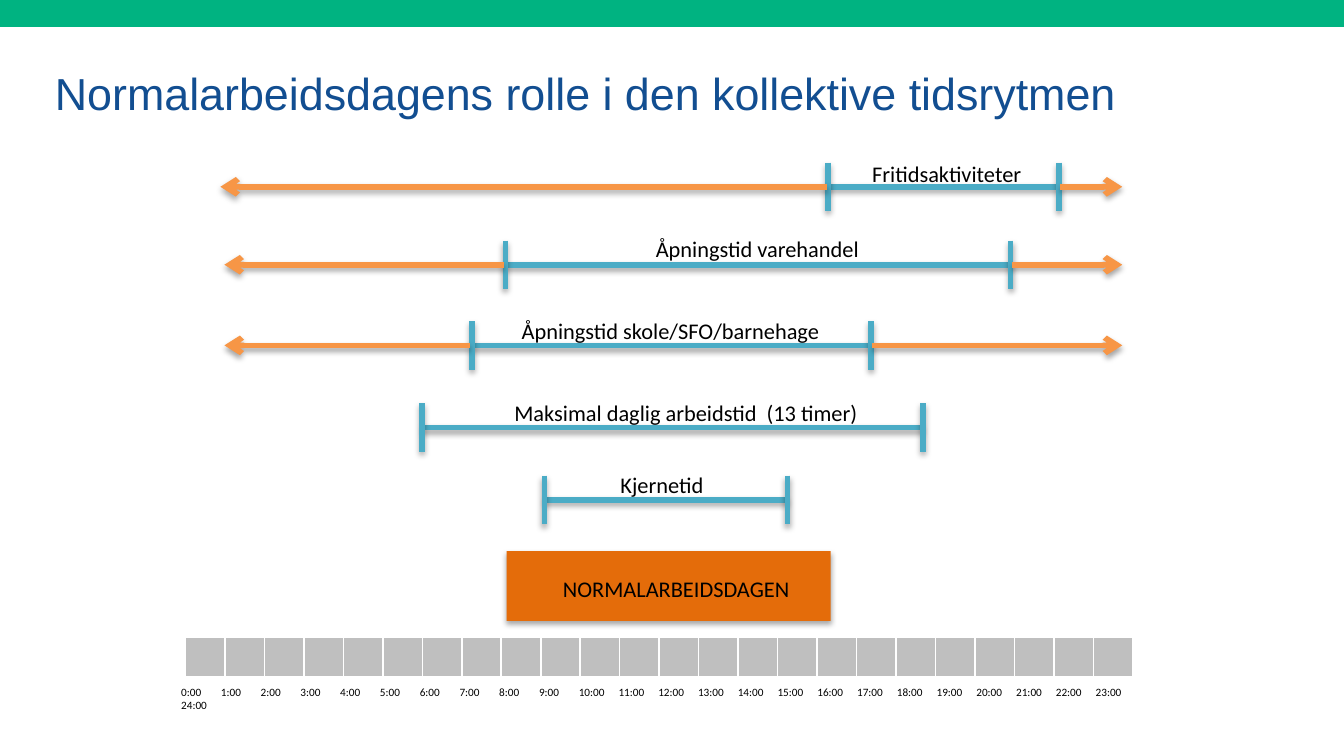
from dataclasses import dataclass
from typing import Optional

from lxml.etree import SubElement
from pptx import Presentation
from pptx.dml.color import RGBColor
from pptx.enum.shapes import MSO_CONNECTOR as Connector, MSO_SHAPE as Shape
from pptx.enum.text import MSO_ANCHOR as Anchor, PP_ALIGN as Align
from pptx.oxml.ns import qn
from pptx.util import Inches, Pt

COLORS = {
    "banner": "00B381",
    "title": "124E91",
    "workday": "E46C0A",
    "span": "4BACC6",
    "flex": "F79646",
    "hour": "BFBFBF",
    "text": "000000",
    "border": "FFFFFF",
}
SLIDE_WIDTH = 10
SLIDE_HEIGHT = SLIDE_WIDTH * 9 / 16
HOURS = 24
DAY_START, DAY_END = 1.67, 8.35
TICK_REACH = 0.18
LABEL_HEIGHT = 0.3
ARROW_GAP = 0.01
TAB_STEP = 7.1 / HOURS
TABLE_WIDTH = 7.05


@dataclass(frozen=True)
class TimeSpan:
    label: str
    y: float
    start: float
    end: float
    label_left: float
    label_top: float
    label_width: float
    flexible: bool = False
    arrow_start: float = DAY_START


SPANS = [
    TimeSpan("Kjernetid", 3.72, 4.05, 5.86, 4.02, 3.46, 1.81),
    TimeSpan("Maksimal daglig arbeidstid  (13 timer)", 3.18, 3.14, 6.87, 3.34, 2.92, 3.53),
    TimeSpan("Åpningstid skole/SFO/barnehage", 2.57, 3.51, 6.48, 3.51, 2.31, 2.96, True),
    TimeSpan("Fritidsaktiviteter", 1.39, 6.16, 7.88, 6.38, 1.14, 1.33, True, 1.64),
    TimeSpan("Åpningstid varehandel", 1.97, 3.76, 7.52, 3.89, 1.7, 3.49, True),
]


def rgb(name: str) -> RGBColor:
    return RGBColor.from_string(COLORS[name])


def add_shadow(properties) -> None:
    effects = properties.find(qn("a:effectLst"))
    if effects is None:
        effects = SubElement(properties, qn("a:effectLst"))
    shadow = SubElement(effects, qn("a:outerShdw"), blurRad=str(Pt(3.1)),
                        dist=str(Pt(1.8)), dir="5400000", rotWithShape="0")
    black = SubElement(shadow, qn("a:srgbClr"), val=COLORS["text"])
    SubElement(black, qn("a:alpha"), val="35000")


def add_block(slide, left: float, top: float, width: float, height: float, color: str):
    block = slide.shapes.add_shape(Shape.RECTANGLE, Inches(left), Inches(top),
                                   Inches(width), Inches(height))
    block.shadow.inherit = False
    block.fill.solid()
    block.fill.fore_color.rgb = rgb(color)
    block.line.fill.background()
    return block


def add_line(slide, x1: float, y1: float, x2: float, y2: float,
             color: str, arrow: bool = False) -> None:
    line = slide.shapes.add_connector(Connector.STRAIGHT, Inches(x1), Inches(y1),
                                      Inches(x2), Inches(y2))
    line.line.color.rgb = rgb(color)
    line.line.width = Pt(3)
    if arrow:
        SubElement(line._element.spPr.find(qn("a:ln")), qn("a:tailEnd"), type="arrow")
    add_shadow(line._element.spPr)


def add_run(paragraph, text: str, size: float, font: str = "Calibri", color: str = "text") -> None:
    run = paragraph.add_run()
    run.text = text
    run.font.size = Pt(size)
    run.font.name = font
    run.font.color.rgb = rgb(color)


def add_text_frame(slide, left: float, top: float, width: float, height: float,
                   align: Optional[Align] = None):
    frame = slide.shapes.add_textbox(Inches(left), Inches(top),
                                     Inches(width), Inches(height)).text_frame
    frame.word_wrap = True
    frame.paragraphs[0].alignment = align
    return frame


def draw_span(slide, span: TimeSpan) -> None:
    add_line(slide, span.start, span.y, span.end, span.y, "span")
    for x in (span.start, span.end):
        add_line(slide, x, span.y - TICK_REACH, x, span.y + TICK_REACH, "span")
    if span.flexible:
        add_line(slide, span.start - ARROW_GAP, span.y, span.arrow_start, span.y, "flex", True)
        add_line(slide, span.end + ARROW_GAP, span.y, DAY_END, span.y, "flex", True)
    frame = add_text_frame(slide, span.label_left, span.label_top,
                           span.label_width, LABEL_HEIGHT, Align.CENTER)
    add_run(frame.paragraphs[0], span.label, 12)


def draw_hours(slide) -> None:
    table = slide.shapes.add_table(1, HOURS, Inches(1.38), Inches(4.74),
                                   Inches(TABLE_WIDTH), Inches(0.31)).table
    table.first_row = False
    table.horz_banding = False
    for column in table.columns:
        column.width = Inches(TABLE_WIDTH / HOURS)
    for cell in table.iter_cells():
        cell.margin_left = cell.margin_right = cell.margin_top = cell.margin_bottom = 0
        properties = cell._tc.get_or_add_tcPr()
        for side, width in (("L", 1), ("R", 1), ("T", 1), ("B", 3)):
            border = SubElement(properties, qn(f"a:ln{side}"), w=str(Pt(width)))
            fill = SubElement(border, qn("a:solidFill"))
            SubElement(fill, qn("a:srgbClr"), val=COLORS["border"])
        cell.fill.solid()
        cell.fill.fore_color.rgb = rgb("hour")


def draw_hour_labels(slide) -> None:
    paragraph = add_text_frame(slide, 1.25, 5.05, 7.33, 0.3).paragraphs[0]
    tabs = SubElement(paragraph._p.get_or_add_pPr(), qn("a:tabLst"))
    for hour in range(1, HOURS + 1):
        SubElement(tabs, qn("a:tab"), pos=str(Inches(hour * TAB_STEP)), algn="l")
    add_run(paragraph, "\t".join(f"{hour}:00" for hour in range(HOURS + 1)), 6)


def main() -> None:
    presentation = Presentation()
    presentation.slide_width = Inches(SLIDE_WIDTH)
    presentation.slide_height = Inches(SLIDE_HEIGHT)
    slide = presentation.slides.add_slide(presentation.slide_layouts[6])

    add_block(slide, 0, 0, SLIDE_WIDTH, 0.2, "banner")
    title = add_text_frame(slide, 0.31, 0, 9, 0.94)
    title.vertical_anchor = Anchor.BOTTOM
    add_run(title.paragraphs[0], "Normalarbeidsdagens rolle i den kollektive tidsrytmen",
            24, "Arial", "title")

    workday = add_block(slide, 3.77, 4.1, 2.41, 0.52, "workday")
    add_shadow(workday._element.spPr)
    workday_label = add_text_frame(slide, 4.09, 4.23, 1.91, LABEL_HEIGHT)
    add_run(workday_label.paragraphs[0], "NORMALARBEIDSDAGEN", 12)

    for span in SPANS:
        draw_span(slide, span)
    draw_hours(slide)
    draw_hour_labels(slide)
    presentation.save("out.pptx")


if __name__ == "__main__":
    main()
